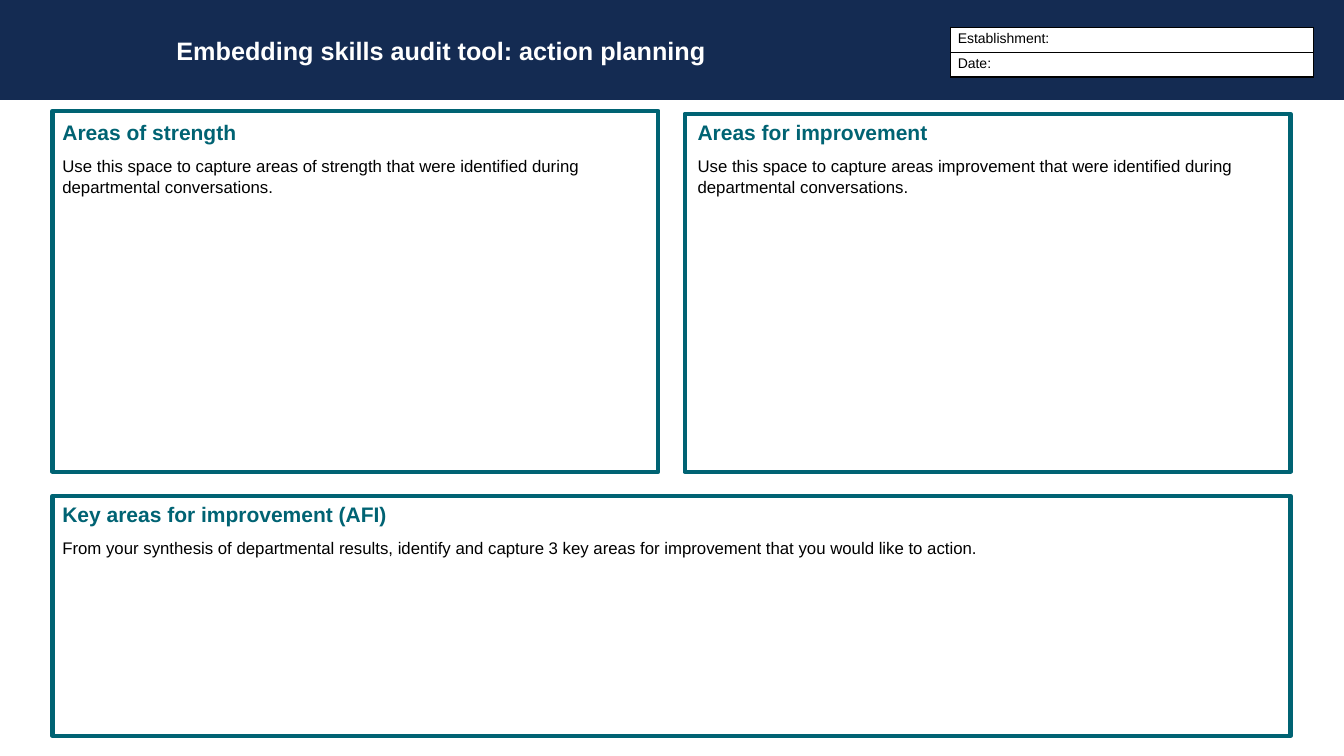
"""Build the action planning slide of the skills audit tool."""
from lxml import etree
from pptx import Presentation
from pptx.dml.color import RGBColor
from pptx.enum.shapes import MSO_SHAPE
from pptx.enum.text import MSO_ANCHOR, PP_ALIGN
from pptx.oxml.ns import qn
from pptx.util import Inches, Pt

RECT = MSO_SHAPE.RECTANGLE
MIDDLE, TOP = MSO_ANCHOR.MIDDLE, MSO_ANCHOR.TOP
LEFT = PP_ALIGN.LEFT
FONT = "Arial"
COLORS = {"navy": "142B52", "teal": "006373", "black": "000000", "white": "FFFFFF"}

TITLE = "Embedding skills audit tool: action planning"
FIELDS = ["Establishment:", "Date:"]
PANELS = [
    {"head": "Areas of strength",
     "body": "Use this space to capture areas of strength that were identified "
             "during departmental conversations.",
     "box": (0.52, 1.1, 6.01, 3.58), "text": (0.52, 1.14, 6.01)},
    {"head": "Areas for improvement",
     "body": "Use this space to capture areas improvement that were identified "
             "during departmental conversations.",
     "box": (6.79, 1.13, 6.01, 3.55), "text": (6.82, 1.14, 5.98)},
    {"head": "Key areas for improvement (AFI)",
     "body": "From your synthesis of departmental results, identify and capture "
             "3 key areas for improvement that you would like to action.",
     "box": (0.52, 4.92, 12.28, 2.38), "text": (0.52, 4.93, 10.73)},
]


def color(name):
    return RGBColor.from_string(COLORS[name])


def write(frame, text, size, tint, bold=False):
    frame.text = text
    frame.word_wrap = True
    line = frame.paragraphs[0]
    line.alignment = LEFT
    font = line.runs[0].font
    font.name, font.size, font.bold = FONT, Pt(size), bold
    font.color.rgb = color(tint)


def add_rect(slide, box, fill=None, edge=None):
    rect = slide.shapes.add_shape(RECT, *map(Inches, box))
    rect.shadow.inherit = False
    if fill:
        rect.fill.solid()
        rect.fill.fore_color.rgb = color(fill)
    else:
        rect.fill.background()
    if edge:
        rect.line.color.rgb = color(edge)
        rect.line.width = Pt(3)
    else:
        rect.line.fill.background()


def add_panel(slide, panel):
    add_rect(slide, panel["box"], edge="teal")
    left, top, width = panel["text"]
    head = slide.shapes.add_textbox(*map(Inches, (left, top, width, 0.35)))
    write(head.text_frame, panel["head"], 15, "teal", True)
    body = slide.shapes.add_textbox(*map(Inches, (left, top + 0.36, width, 0.71)))
    write(body.text_frame, panel["body"], 12, "black")


def add_border(cell):
    props = cell._tc.get_or_add_tcPr()
    for spot, side in enumerate(("lnL", "lnR", "lnT", "lnB")):
        line = etree.Element(qn(f"a:{side}"), w=str(Pt(1)))
        fill = etree.SubElement(line, qn("a:solidFill"))
        etree.SubElement(fill, qn("a:srgbClr"), val=COLORS["black"])
        props.insert(spot, line)


def add_fields(slide):
    place = map(Inches, (9.43, 0.27, 3.6, 0.48))
    table = slide.shapes.add_table(len(FIELDS), 1, *place).table
    table.first_row = table.horz_banding = False
    for row, label in enumerate(FIELDS):
        cell = table.cell(row, 0)
        write(cell.text_frame, label, 10, "black")
        cell.margin_left = cell.margin_right = Inches(0.07)
        cell.margin_top = cell.margin_bottom = Inches(0.04)
        cell.vertical_anchor = TOP
        cell.fill.solid()
        cell.fill.fore_color.rgb = color("white")
        add_border(cell)


def add_title(slide):
    title = slide.shapes.title
    title.left, title.top, title.width, title.height = map(Inches, (1.65, 0.3, 7.67, 0.4))
    write(title.text_frame, TITLE, 18, "white", True)
    title.text_frame.vertical_anchor = MIDDLE
    title.element.getparent().append(title.element)


def main():
    deck = Presentation()
    deck.slide_width, deck.slide_height = Inches(13.33), Inches(7.5)
    slide = deck.slides.add_slide(deck.slide_layouts[5])
    for panel in PANELS:
        add_panel(slide, panel)
    add_rect(slide, (0, 0, 13.33, 0.99), fill="navy")
    add_fields(slide)
    add_title(slide)
    deck.save("out.pptx")


if __name__ == "__main__":
    main()
